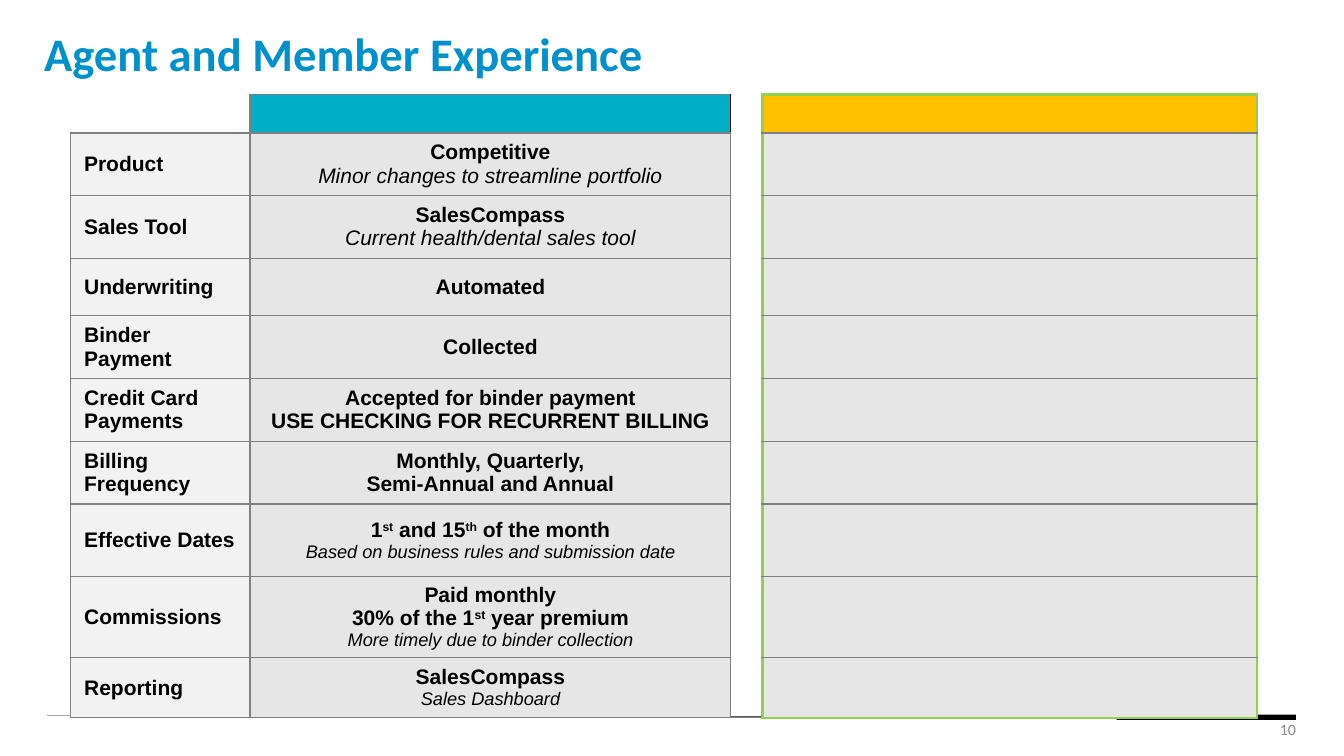
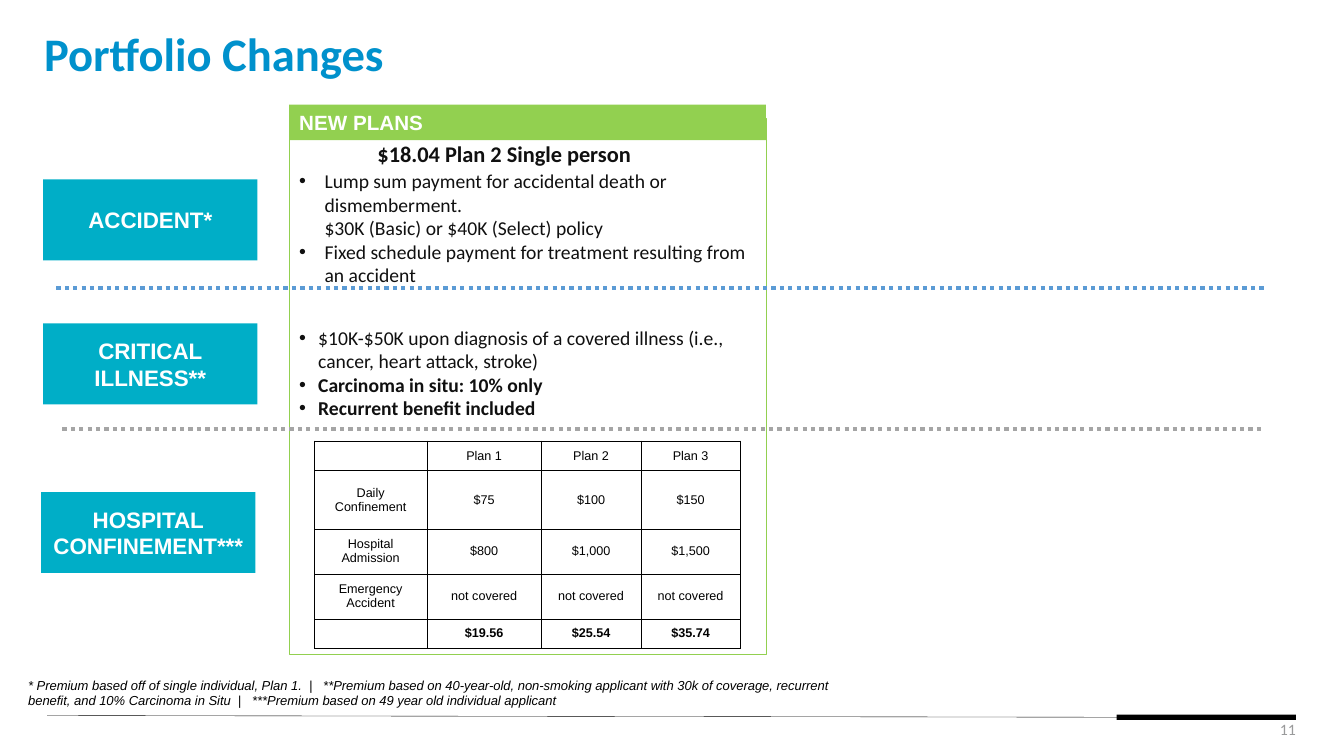
from lxml import etree
from pptx import Presentation
from pptx.dml.color import RGBColor
from pptx.enum import dml, shapes, text
from pptx.oxml import ns
from pptx.util import Cm, Pt

rgb = RGBColor.from_string
TEAL, GREEN, AMBER, GRAY = "00AEC7", "92D050", "FFC000", "808080"
BLACK, WHITE, INK, BLUE = "000000", "FFFFFF", "101010", "0091CC"
LEFT, CENTER, RIGHT = text.PP_ALIGN.LEFT, text.PP_ALIGN.CENTER, text.PP_ALIGN.RIGHT
MIDDLE = text.MSO_ANCHOR.MIDDLE
RECTANGLE = shapes.MSO_SHAPE.RECTANGLE
STRAIGHT = shapes.MSO_CONNECTOR.STRAIGHT


def write(frame, lines, size, face="Arial", hue=BLACK, align=LEFT,
          bold=False, italic=False, hang=0):
    """Append paragraphs; ^ marks enclose superscripts, hang (cm) makes bullets."""
    for line in lines:
        paragraph = frame.add_paragraph() if frame.text else frame.paragraphs[0]
        if "^" in line:
            for i, piece in enumerate(line.split("^")):
                run = paragraph.add_run()
                run.text = piece
                if i % 2:
                    run.font._element.set("baseline", "30000")
        else:
            paragraph.text = line
        paragraph.alignment = align
        if hang:
            props = paragraph._p.get_or_add_pPr()
            props.set("marL", str(Cm(hang)))
            props.set("indent", str(-Cm(hang)))
            etree.SubElement(props, ns.qn("a:buFont")).set("typeface", "Arial")
            etree.SubElement(props, ns.qn("a:buChar")).set("char", "•")
        font = paragraph.font
        font.size, font.name, font.bold, font.italic = Pt(size), face, bold, italic
        font.color.rgb = rgb(hue)


def style_cell(cell, borders, fill=None, pad=0.0):
    """Borders map the sides L, R, T, B to (colour, points); other sides get none."""
    props = cell._tc.get_or_add_tcPr()
    for side in "LRTB":
        line = etree.SubElement(props, ns.qn(f"a:ln{side}"))
        if side in borders:
            hue, points = borders[side]
            line.set("w", str(Pt(points)))
            solid = etree.SubElement(line, ns.qn("a:solidFill"))
            etree.SubElement(solid, ns.qn("a:srgbClr")).set("val", hue)
        else:
            etree.SubElement(line, ns.qn("a:noFill"))
    if fill:
        cell.fill.solid()
        cell.fill.fore_color.rgb = rgb(fill)
    else:
        cell.fill.background()
    cell.vertical_anchor = MIDDLE
    cell.margin_left = cell.margin_right = Cm(0.34)
    cell.margin_top = cell.margin_bottom = Cm(pad)


deck = Presentation()
deck.slide_width, deck.slide_height = Cm(33.87), Cm(19.05)

# Shared frame: footer rule, page number, title
for heading, number, number_hue in [("Agent and Member Experience", "10", "8C8C8C"),
                                    ("Portfolio Changes", "11", "999A9B")]:
    slide = deck.slides.add_slide(deck.slide_layouts[6])
    rule = slide.shapes.add_connector(STRAIGHT, Cm(1.19), Cm(18.03), Cm(31.85), Cm(18.08))
    rule.line.color.rgb = rgb(BLACK)
    rule.line.width = Pt(0.25)
    bar = slide.shapes.add_shape(RECTANGLE, Cm(28.14), Cm(18.01), Cm(4.52), Cm(0.13))
    bar.fill.solid()
    bar.fill.fore_color.rgb = rgb(BLACK)
    bar.line.fill.background()
    page = slide.shapes.add_textbox(Cm(30.73), Cm(18.14), Cm(1.93), Cm(0.48)).text_frame
    page.word_wrap, page.vertical_anchor, page.margin_right = True, MIDDLE, 0
    write(page, [number], 11.3, "Calibri", number_hue, RIGHT)
    title = slide.shapes.add_textbox(Cm(0.86), Cm(0.84), Cm(32.18), Cm(1.14)).text_frame
    title.word_wrap, title.vertical_anchor = True, MIDDLE
    write(title, [heading], 33.3, "Calibri", BLUE, bold=True)
    title.paragraphs[0].line_spacing = 0.9

experience, portfolio = deck.slides

# Slide 1: comparison table
topics = [  # label, row height, statements, note, note size
    ("Product", 1.58, ["Competitive"], "Minor changes to streamline portfolio", 15),
    ("Sales Tool", 1.58, ["SalesCompass"], "Current health/dental sales tool", 15),
    ("Underwriting", 1.45, ["Automated"], "", 0),
    ("Binder Payment", 1.58, ["Collected"], "", 0),
    ("Credit Card Payments", 1.58,
     ["Accepted for binder payment", "USE CHECKING FOR RECURRENT BILLING"], "", 0),
    ("Billing Frequency", 1.58, ["Monthly, Quarterly,", "Semi-Annual and Annual"], "", 0),
    ("Effective Dates", 1.83, ["1^st^ and 15^th^ of the month"],
     "Based on business rules and submission date", 13),
    ("Commissions", 2.04, ["Paid monthly", "30% of the 1^st^ year premium"],
     "More timely due to binder collection", 13),
    ("Reporting", 1.52, ["SalesCompass"], "Sales Dashboard", 13),
]
thin, thick, dark = (GRAY, 1), (GREEN, 2.25), (BLACK, 1)
boxed = dict.fromkeys("LRTB", thin)
comparison = experience.shapes.add_table(
    len(topics) + 1, 4, Cm(1.78), Cm(2.38), Cm(29.9), Cm(15.71)).table
comparison.first_row = comparison.horz_banding = False
for column, width in zip(comparison.columns, [4.52, 12.12, 0.79, 12.47]):
    column.width = Cm(width)
comparison.rows[0].height = Cm(0.97)
header = [
    ({"L": (WHITE, 1), "T": (WHITE, 1), "R": thin, "B": thin}, None),
    ({**boxed, "R": dark}, TEAL),
    ({"L": dark, "R": thick}, WHITE),
    ({"L": thick, "R": thick, "T": thick, "B": thin}, AMBER),
]
for col, (borders, fill) in enumerate(header):
    cell = comparison.cell(0, col)
    style_cell(cell, borders, fill)
    write(cell.text_frame, [""], 15)
for row, (label, height, statements, note, note_size) in enumerate(topics, 1):
    comparison.rows[row].height = Cm(height)
    name, current, gap, future = (comparison.cell(row, col) for col in range(4))
    style_cell(name, boxed, "F2F2F2", pad=0.08)
    write(name.text_frame, [label], 15, bold=True)
    style_cell(current, boxed, "E7E6E6", pad=0.08)
    write(current.text_frame, statements, 15, align=CENTER, bold=True)
    if note:
        write(current.text_frame, [note], note_size, align=CENTER, italic=True)
    style_cell(gap, {"L": thin, "R": thick, "B": thin})
    bottom = thick if row == len(topics) else thin
    style_cell(future, {"L": thick, "R": thick, "T": thin, "B": bottom}, "E7E6E6")
    write(future.text_frame, [""], 15)
comparison.cell(1, 2).merge(comparison.cell(len(topics), 2))

# Slide 2: benefits, hospital plans, categories
benefits = [  # top, height, hanging indent, plain lines, bold lines
    (4.14, 3.84, 0.64,
     ["Lump sum payment for accidental death or dismemberment. \v"
      "$30K (Basic) or $40K (Select) policy",
      "Fixed schedule payment for treatment resulting from an accident"], []),
    (8.08, 2.64, 0.48,
     ["$10K-$50K upon diagnosis of a covered illness (i.e., cancer, heart attack, stroke)"],
     ["Carcinoma in situ: 10% only", "Recurrent benefit included"]),
]
for top, height, hang, plain, strong in benefits:
    frame = portfolio.shapes.add_textbox(Cm(7.29), Cm(top), Cm(12.01), Cm(height)).text_frame
    frame.word_wrap = True
    write(frame, plain, 14, "Calibri", INK, hang=hang)
    write(frame, strong, 14, "Calibri", INK, bold=True, hang=hang)

plans = [
    (0.74, ["", "Plan 1", "Plan 2", "Plan 3"]),
    (1.48, ["Daily Confinement", "$75", "$100", "$150"]),
    (1.13, ["Hospital Admission", "$800", "$1,000", "$1,500"]),
    (1.13, ["Emergency Accident"] + ["not covered"] * 3),
    (0.74, ["", "$19.56", "$25.54", "$35.74"]),
]
hospital = portfolio.shapes.add_table(
    len(plans), 4, Cm(7.92), Cm(11.11), Cm(10.74), Cm(5.22)).table
hospital.first_row = hospital.horz_banding = False
for column, width in zip(hospital.columns, [2.84, 2.88, 2.51, 2.51]):
    column.width = Cm(width)
hairlines = dict.fromkeys("LRTB", (BLACK, 0.25))
for row, (height, values) in enumerate(plans):
    hospital.rows[row].height = Cm(height)
    for col, value in enumerate(values):
        cell = hospital.cell(row, col)
        style_cell(cell, hairlines, pad=0.18 if value else 0)
        write(cell.text_frame, [value], 9, align=CENTER, bold=row == len(plans) - 1)

outline = portfolio.shapes.add_shape(RECTANGLE, Cm(7.29), Cm(2.97), Cm(12.01), Cm(13.51))
outline.fill.background()
outline.line.color.rgb = rgb(GREEN)
outline.line.width = Pt(0.25)

for left, top, hue in [(1.42, 7.26, "5B9BD5"), (1.57, 10.82, "A5A5A5")]:
    divider = portfolio.shapes.add_connector(STRAIGHT, Cm(left), Cm(top), Cm(31.88), Cm(top))
    divider.line.color.rgb = rgb(hue)
    divider.line.width = Pt(3)
    divider.line.dash_style = dml.MSO_LINE.ROUND_DOT

for left, top, lines in [(1.09, 4.52, ["ACCIDENT*"]),
                         (1.09, 8.15, ["CRITICAL", "ILLNESS**"]),
                         (1.04, 12.4, ["HOSPITAL", "CONFINEMENT***"])]:
    category = portfolio.shapes.add_shape(RECTANGLE, Cm(left), Cm(top), Cm(5.4), Cm(2.04))
    category.fill.solid()
    category.fill.fore_color.rgb = rgb(TEAL)
    category.line.fill.background()
    frame = category.text_frame
    frame.word_wrap, frame.vertical_anchor = False, MIDDLE
    frame.margin_left = frame.margin_right = frame.margin_top = frame.margin_bottom = 0
    write(frame, lines, 16, hue=WHITE, align=CENTER, bold=True)

band = portfolio.shapes.add_shape(RECTANGLE, Cm(7.29), Cm(2.64), Cm(12.01), Cm(0.89))
band.fill.solid()
band.fill.fore_color.rgb = rgb(GREEN)
band.line.fill.background()
band.text_frame.vertical_anchor = text.MSO_ANCHOR.TOP
write(band.text_frame, ["NEW PLANS"], 14.7, hue=WHITE, bold=True)

price = portfolio.shapes.add_textbox(Cm(8.28), Cm(3.4), Cm(8.86), Cm(0.94)).text_frame
price.word_wrap = True
write(price, ["$18.04 Plan 2 Single person"], 16, "Calibri", INK, CENTER, bold=True)

footnote = portfolio.shapes.add_textbox(Cm(0.46), Cm(16.94), Cm(21.62), Cm(1.07)).text_frame
footnote.word_wrap = True
write(footnote, ["* Premium based off of single individual, Plan 1.  |   **Premium based on "
                 "40-year-old, non-smoking applicant with 30k of coverage, recurrent benefit, "
                 "and 10% Carcinoma in Situ  |   ***Premium based on 49 year old individual "
                 "applicant"], 9.3, italic=True)

# No shadows anywhere
for slide in deck.slides:
    for item in slide.shapes:
        if item.shape_type == shapes.MSO_SHAPE_TYPE.AUTO_SHAPE:
            item.shadow.inherit = False
        elif item.shape_type == shapes.MSO_SHAPE_TYPE.LINE:
            etree.SubElement(item._element.spPr, ns.qn("a:effectLst"))

deck.save("out.pptx")
